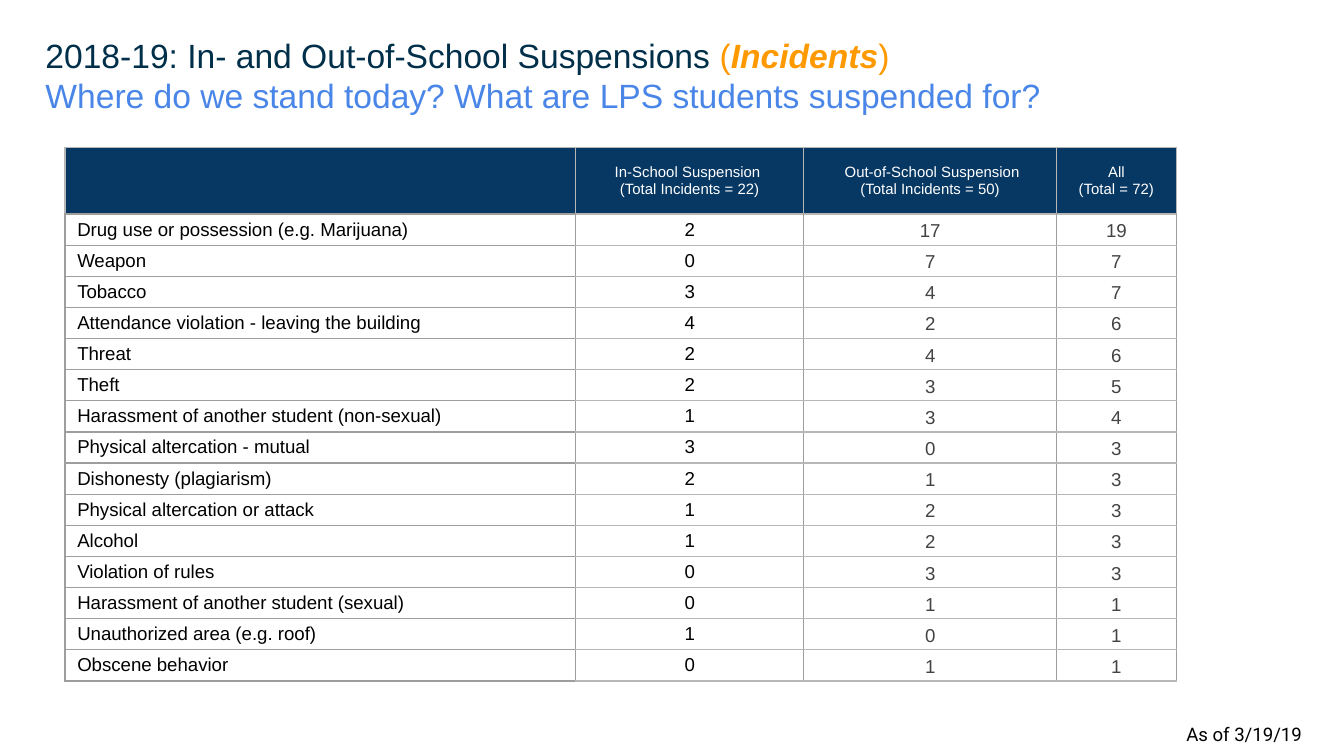
"""Build the slide of in- and out-of-school suspension incidents."""
import lxml.etree
import pptx
import pptx.dml.color
import pptx.enum.text
import pptx.oxml.ns
import pptx.util

Cm = pptx.util.Cm
Pt = pptx.util.Pt
ALIGN = pptx.enum.text.PP_ALIGN
MIDDLE = pptx.enum.text.MSO_ANCHOR.MIDDLE

THEME = {
    "navy": "002F4A", "orange": "FF9900", "blue": "4A86E8", "header": "073763",
    "white": "FFFFFF", "black": "000000", "gray": "434343",
    "side_rule": "9E9E9E", "row_rule": "B7B7B7",
    "title_size": 18, "header_size": 8, "body_size": 10,
    "font": "Arial", "date_font": "Roboto",
}
TITLE = [
    [("2018-19: In- and Out-of-School Suspensions ", {"color": "navy"}),
     ("(", {"color": "orange"}),
     ("Incidents", {"color": "orange", "bold": True, "italic": True}),
     (")", {"color": "orange"})],
    [("Where do we stand today? What are LPS students suspended for?", {"color": "blue"})],
]
DATE = "As of 3/19/19"
HEADERS = [
    [],
    ["In-School Suspension ", "(Total Incidents = 22)"],
    [" Out-of-School Suspension", "(Total Incidents = 50)"],
    ["All", "(Total = 72)"],
]
INCIDENTS = [
    ("Drug use or possession (e.g. Marijuana)", 2, 17, 19),
    ("Weapon", 0, 7, 7),
    ("Tobacco", 3, 4, 7),
    ("Attendance violation - leaving the building", 4, 2, 6),
    ("Threat", 2, 4, 6),
    ("Theft", 2, 3, 5),
    ("Harassment of another student (non-sexual)", 1, 3, 4),
    ("Physical altercation - mutual", 3, 0, 3),
    ("Dishonesty (plagiarism)", 2, 1, 3),
    ("Physical altercation or attack", 1, 2, 3),
    ("Alcohol", 1, 2, 3),
    ("Violation of rules", 0, 3, 3),
    ("Harassment of another student (sexual)", 0, 1, 1),
    ("Unauthorized area (e.g. roof)", 1, 0, 1),
    ("Obscene behavior", 0, 1, 1),
]
COLUMN_WIDTHS = [9.65, 4.31, 4.78, 2.26]
HEADER_HEIGHT, ROW_HEIGHT = 1.13, 0.56


def color_of(name):
    """Return the theme colour of that name."""
    return pptx.dml.color.RGBColor.from_string(THEME[name])


def write(frame, lines, *, size, color="black", font="font", align=ALIGN.LEFT, spacing=1.0):
    """Fill a text frame with lines, each a string or a list of formatted spans."""
    for index, line in enumerate(lines):
        para = frame.paragraphs[0] if index == 0 else frame.add_paragraph()
        para.alignment = align
        para.line_spacing = spacing
        for text, style in [(line, {})] if isinstance(line, str) else line:
            span = para.add_run()
            span.text = text
            span.font.name = THEME[font]
            span.font.size = Pt(THEME[size])
            span.font.bold = style.get("bold", False)
            span.font.italic = style.get("italic", False)
            span.font.color.rgb = color_of(style.get("color", color))


def add_text(page, left, top, width, height, lines, **style):
    """Add a wrapping text box with even insets."""
    frame = page.shapes.add_textbox(Cm(left), Cm(top), Cm(width), Cm(height)).text_frame
    frame.word_wrap = True
    frame.margin_left = frame.margin_right = frame.margin_top = frame.margin_bottom = Cm(0.25)
    write(frame, lines, **style)


def set_borders(cell, sides, rows):
    """Rule the left and right edges in one colour, the top and bottom in another."""
    properties = cell._tc.get_or_add_tcPr()
    qn = pptx.oxml.ns.qn
    for tag, name in (("a:lnL", sides), ("a:lnR", sides), ("a:lnT", rows), ("a:lnB", rows)):
        line = lxml.etree.SubElement(properties, qn(tag), w=str(Pt(0.75)))
        fill = lxml.etree.SubElement(line, qn("a:solidFill"))
        lxml.etree.SubElement(fill, qn("a:srgbClr"), val=THEME[name])


def style_cell(cell, side_margin, end_margin, sides, rows, fill=None):
    """Set the margins, anchor, borders and fill of a cell."""
    cell.margin_left = cell.margin_right = Cm(side_margin)
    cell.margin_top = cell.margin_bottom = Cm(end_margin)
    cell.vertical_anchor = MIDDLE
    set_borders(cell, sides, rows)
    if fill:
        cell.fill.solid()
        cell.fill.fore_color.rgb = color_of(fill)
    else:
        cell.fill.background()


def add_incident_table(page):
    """Add the table of incidents by kind of suspension."""
    heights = [HEADER_HEIGHT] + [ROW_HEIGHT] * len(INCIDENTS)
    table = page.shapes.add_table(
        len(heights), len(COLUMN_WIDTHS), Cm(1.23), Cm(2.78),
        Cm(sum(COLUMN_WIDTHS)), Cm(sum(heights))).table
    table.first_row = table.horz_banding = False
    for column, width in zip(table.columns, COLUMN_WIDTHS):
        column.width = Cm(width)
    for row, height in zip(table.rows, heights):
        row.height = Cm(height)
    for column, lines in enumerate(HEADERS):
        cell = table.cell(0, column)
        style_cell(cell, 0.25, 0.25, "row_rule", "row_rule", "header")
        write(cell.text_frame, lines, size="header_size", color="white", align=ALIGN.CENTER)
    for row, values in enumerate(INCIDENTS, 1):
        for column, value in enumerate(values):
            cell = table.cell(row, column)
            style_cell(cell, 0.08, 0.05, "side_rule", "row_rule" if column else "side_rule")
            if column == 0:
                cell.margin_left = Cm(0.23)
            write(cell.text_frame, [str(value)], size="body_size",
                  color="gray" if column > 1 else "black",
                  align=ALIGN.CENTER if column else ALIGN.LEFT,
                  spacing=1.15 if column > 1 else 1.0)


def main():
    """Assemble and save the deck."""
    deck = pptx.Presentation()
    deck.slide_width, deck.slide_height = Cm(25.4), Cm(14.28)
    page = deck.slides.add_slide(deck.slide_layouts[6])
    add_text(page, 0.61, 0.41, 24.49, 1.88, TITLE, size="title_size")
    add_incident_table(page)
    add_text(page, 22.17, 13.44, 3.23, 0.56, [DATE], size="body_size", font="date_font")
    deck.save("out.pptx")


if __name__ == "__main__":
    main()
